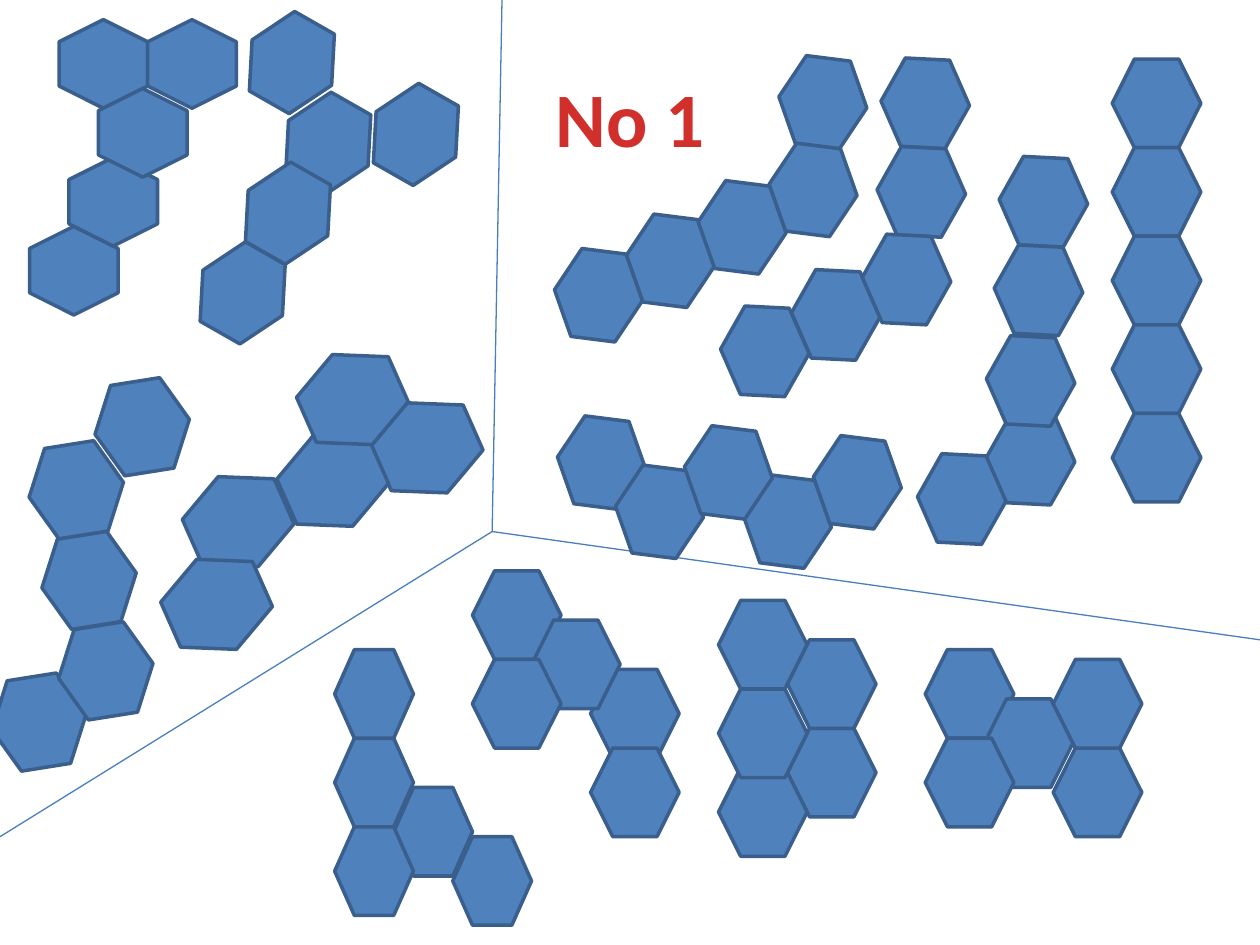
from pptx import Presentation
from pptx.dml.color import RGBColor
from pptx.enum.shapes import MSO_CONNECTOR, MSO_SHAPE
from pptx.enum.text import MSO_ANCHOR, PP_ALIGN
from pptx.oxml.ns import qn
from pptx.util import Cm, Pt
from lxml import etree

HEXAGON = MSO_SHAPE.HEXAGON
STRAIGHT = MSO_CONNECTOR.STRAIGHT
MIDDLE = MSO_ANCHOR.MIDDLE
CENTER = PP_ALIGN.CENTER

THEME = {
    "font": "Calibri",
    "title_size": Pt(44),
    "title_color": RGBColor.from_string("D02F2C"),
    "hexagon_fill": RGBColor.from_string("4F81BD"),
    "hexagon_line": RGBColor.from_string("3A5F8C"),
    "hexagon_line_width": Pt(2),
    "divider": RGBColor.from_string("4B7EBC"),
    "divider_width": Pt(0.75),
}

SLIDE_WIDTH, SLIDE_HEIGHT = Cm(25.4), Cm(19.05)
GRID_COLUMNS = 128
GRID_STEP = SLIDE_WIDTH / GRID_COLUMNS

TITLE = "No 1"
TITLE_BOX = (Cm(1.27), Cm(0.76), Cm(22.86), Cm(3.18))

JUNCTION = (50, 54)
DIVIDER_ENDS = [(51, 0), (0, 85), (128, 65)]

# (grouped, cell size, rotation, cell corners), all lengths in grid steps
PIECES = [
    (True, (9, 9), 0, [(94, 66), (107, 76), (100, 71), (94, 75), (107, 67)]),
    (True, (9, 9), 0, [(113, row) for row in range(6, 43, 9)]),
    (True, (9.3, 9.3), 209.7, [(20, 25.1), (37.6, 9), (28.7, 9.9), (24.6, 17), (25, 1.7)]),
    (True, (9.7, 9.3), 171, [(4.2, 54.3), (9.6, 38.7), (-0.9, 68.7), (5.9, 63.5), (2.9, 45.1)]),
    (True, (9, 9), 90, [(3, 23), (7, 16), (6, 2), (10, 9), (15, 2)]),
    (True, (9, 9), 2.9, [(89.5, 6), (89.1, 15), (80.4, 27.5), (87.6, 23.9), (73.2, 31.2)]),
    (False, (9, 9), 2.9, [(101.5, 16), (101, 25), (100.2, 42.2), (100.2, 34.2), (93.2, 46.2)]),
    (True, (9, 9), 7.2, [(79.1, 5.9), (78.1, 14.8), (63.6, 22), (70.9, 18.6), (56.3, 25.5)]),
    (True, (9, 9), 0, [(73, 61), (80, 74), (73, 78), (73, 70), (80, 65)]),
    (True, (9, 9), 0, [(48, 58), (60, 68), (54, 63), (48, 67), (60, 76)]),
    (True, (8, 9), 0, [(34, 75), (46, 85), (40, 80), (34, 84), (34, 66)]),
    (False, (9, 9), 7.2, [(75.5, 48.5), (82.6, 44.5), (56.6, 42.5), (62.5, 47.5), (69.5, 43.5)]),
    (True, (10, 10.2), 66.1, [(38.4, 40.4), (19.2, 47.9), (28.8, 43.8), (30.8, 35.5), (17, 56.3)]),
]


def on_grid(*steps):
    return [round(step * GRID_STEP) for step in steps]


def add_title(slide):
    title = slide.shapes.title
    title.left, title.top, title.width, title.height = TITLE_BOX
    title.text_frame.vertical_anchor = MIDDLE
    paragraph = title.text_frame.paragraphs[0]
    paragraph.alignment = CENTER
    run = paragraph.add_run()
    run.text = TITLE
    run.font.name = THEME["font"]
    run.font.size = THEME["title_size"]
    run.font.bold = True
    run.font.color.rgb = THEME["title_color"]


def add_divider(slide, end):
    divider = slide.shapes.add_connector(STRAIGHT, *on_grid(*JUNCTION, *end))
    divider.line.color.rgb = THEME["divider"]
    divider.line.width = THEME["divider_width"]
    etree.SubElement(divider._element.spPr, qn("a:effectLst"))


def add_piece(slide, grouped, size, rotation, corners):
    shapes = slide.shapes.add_group_shape().shapes if grouped else slide.shapes
    for corner in corners:
        hexagon = shapes.add_shape(HEXAGON, *on_grid(*corner, *size))
        hexagon.rotation = rotation
        hexagon.shadow.inherit = False
        hexagon.fill.solid()
        hexagon.fill.fore_color.rgb = THEME["hexagon_fill"]
        hexagon.line.color.rgb = THEME["hexagon_line"]
        hexagon.line.width = THEME["hexagon_line_width"]


def main():
    presentation = Presentation()
    presentation.slide_width = SLIDE_WIDTH
    presentation.slide_height = SLIDE_HEIGHT
    slide = presentation.slides.add_slide(presentation.slide_layouts.get_by_name("Title Only"))
    add_title(slide)
    for end in DIVIDER_ENDS:
        add_divider(slide, end)
    for piece in PIECES:
        add_piece(slide, *piece)
    presentation.save("out.pptx")


if __name__ == "__main__":
    main()
